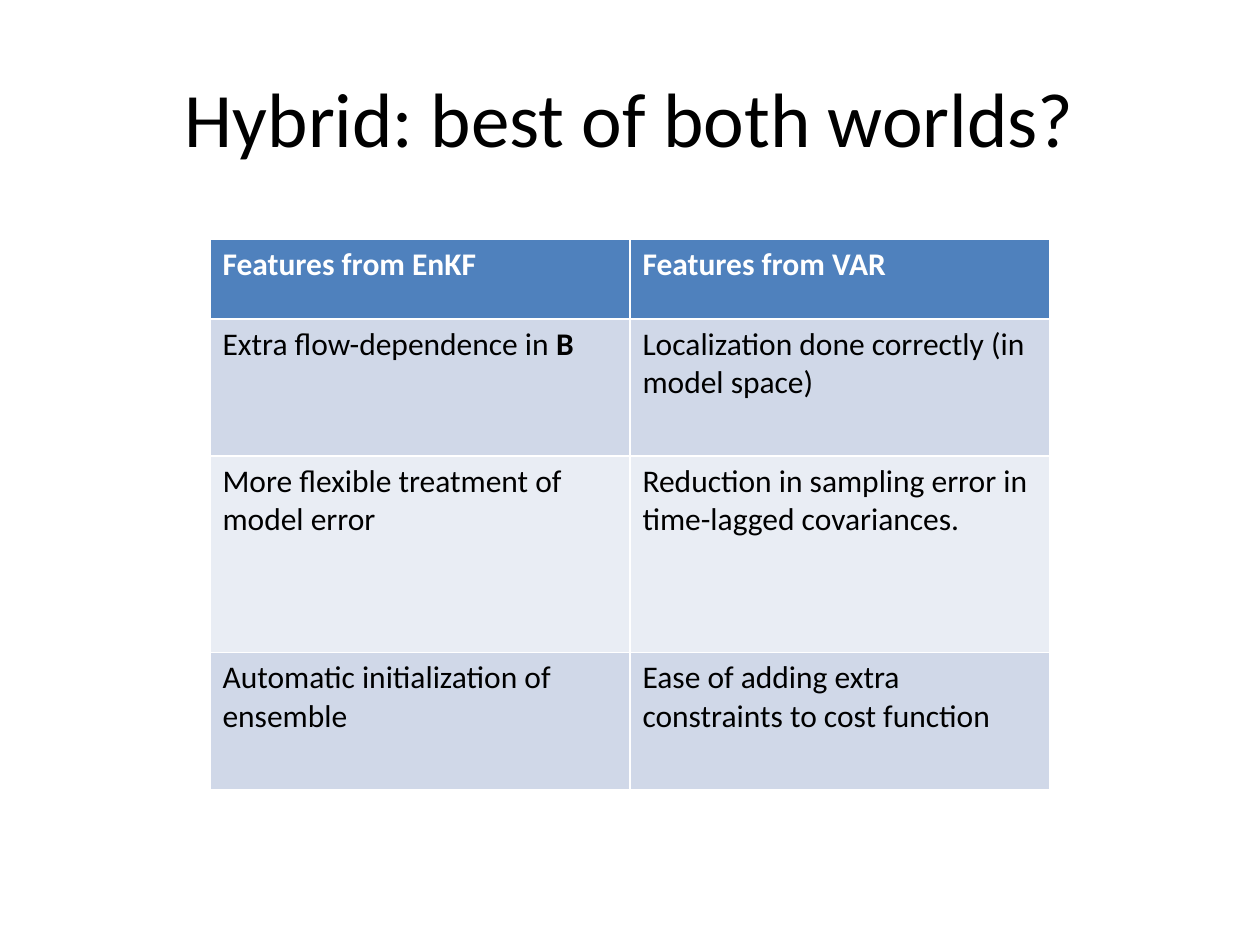
from pptx import Presentation
from pptx.dml.color import RGBColor
from pptx.enum.text import MSO_ANCHOR, PP_ALIGN
from pptx.util import Inches, Pt

BLACK = RGBColor(0x00, 0x00, 0x00)
WHITE = RGBColor(0xFF, 0xFF, 0xFF)
BLUE = RGBColor(0x4F, 0x81, 0xBD)
BANDS = [RGBColor(0xE9, 0xED, 0xF4), RGBColor(0xD0, 0xD8, 0xE8)]
FONT = "Calibri"

# Each cell is a list of (text, bold) runs
FEATURES = [
    [[("Features from EnKF", True)], [("Features from VAR", True)]],
    [[("Extra flow-dependence in ", False), ("B", True)],
     [("Localization done correctly (in model space)", False)]],
    [[("More flexible treatment of model error", False)],
     [("Reduction in sampling error in time-lagged covariances.", False)]],
    [[("Automatic initialization of ensemble", False)],
     [("Ease of adding extra constraints to cost function", False)]],
]
ROW_HEIGHTS = [0.63, 1.09, 1.56, 1.09]


def add_run(p, text, size, color, bold=False):
    r = p.add_run()
    r.text = text
    r.font.name = FONT
    r.font.size = Pt(size)
    r.font.bold = bold
    r.font.color.rgb = color


def add_title(s, text, left, top, width, height):
    tf = s.shapes.add_textbox(left, top, width, height).text_frame
    tf.word_wrap = True
    tf.vertical_anchor = MSO_ANCHOR.MIDDLE
    p = tf.paragraphs[0]
    p.alignment = PP_ALIGN.CENTER
    add_run(p, text, 44, BLACK)


def add_features(s, rows, left, top, width, height):
    # The default table style supplies the white cell borders
    table = s.shapes.add_table(len(rows), len(rows[0]), left, top, width, height).table
    for column in table.columns:
        column.width = int(width / len(rows[0]))
    for i, (row, share) in enumerate(zip(rows, ROW_HEIGHTS)):
        table.rows[i].height = int(height * share / sum(ROW_HEIGHTS))
        for j, runs in enumerate(row):
            cell = table.cell(i, j)
            cell.fill.solid()
            cell.fill.fore_color.rgb = BANDS[i % 2] if i else BLUE
            for text, bold in runs:
                add_run(cell.text_frame.paragraphs[0], text, 18,
                        BLACK if i else WHITE, bold)


def main():
    prs = Presentation()
    prs.slide_width, prs.slide_height = Inches(10), Inches(7.5)
    s = prs.slides.add_slide(prs.slide_layouts[6])
    w, h = prs.slide_width, prs.slide_height

    # Title band, then the table in the middle two thirds of the width
    add_title(s, "Hybrid: best of both worlds?",
              int(w * 0.05), int(h * 0.04), int(w * 0.9), Inches(1.25))
    add_features(s, FEATURES, w // 6, Inches(1.9), w * 2 // 3,
                 Inches(sum(ROW_HEIGHTS)))
    prs.save("out.pptx")


if __name__ == "__main__":
    main()
